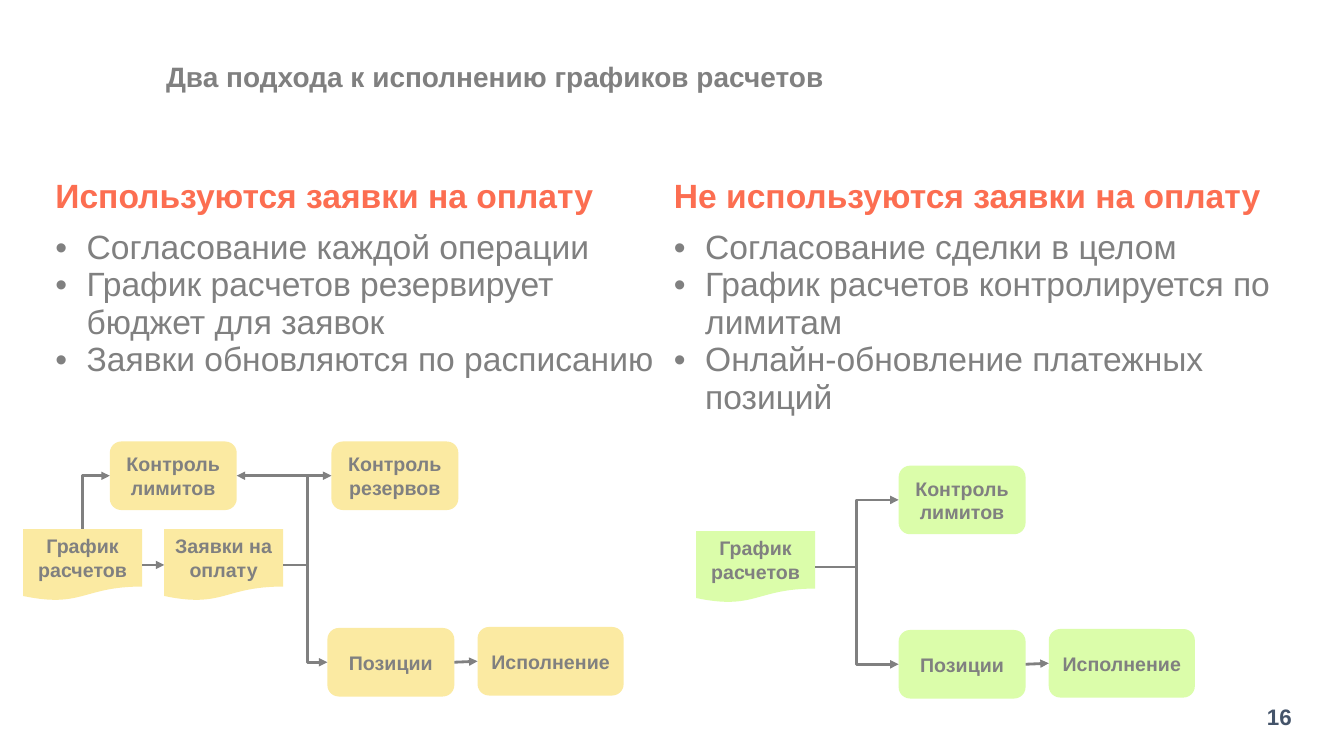
import pptx
import pptx.dml.color
import pptx.enum.shapes
import pptx.enum.text
import pptx.oxml.ns
import pptx.util
from lxml import etree

GRID = pptx.util.Inches(0.1)  # one column or row of the slide grid
FONT = "Arial"
GRAY, CORAL, NAVY = "808080", "FC6E51", "44546A"
YELLOW, GREEN = "FBEAA2", "DBFDAA"
TOP, LEFT, RIGHT = 0, 1, 3  # connection sites
SHAPES = pptx.enum.shapes.MSO_SHAPE
ALIGN = pptx.enum.text.PP_ALIGN
MIDDLE = pptx.enum.text.MSO_ANCHOR.MIDDLE
SIZES = {
    SHAPES.FLOWCHART_DOCUMENT: (11.8, 7.1),
    SHAPES.ROUNDED_RECTANGLE: (12.6, 6.8),
}
APPROACHES = [
    ("Используются заявки на оплату",
     ["Согласование каждой операции",
      "График расчетов резервирует бюджет для заявок",
      "Заявки обновляются по расписанию"]),
    ("Не используются заявки на оплату",
     ["Согласование сделки в целом",
      "График расчетов контролируется по лимитам",
      "Онлайн-обновление платежных позиций"]),
]


def grid(*steps):
    return [round(step * GRID) for step in steps]


def color(value):
    return pptx.dml.color.RGBColor.from_string(value)


def add_xml(parent, tag, **attributes):
    return etree.SubElement(parent, pptx.oxml.ns.qn(tag), attributes)


def style_text(paragraph, size, hex_color, bold=True, align=ALIGN.LEFT):
    paragraph.alignment = align
    for run in paragraph.runs:
        run.font.name = FONT
        run.font.size = pptx.util.Pt(size)
        run.font.bold = bold
        run.font.color.rgb = color(hex_color)


def add_label(slide, text, box, size, hex_color, spacing, align=ALIGN.LEFT):
    frame = slide.shapes.add_textbox(*grid(*box)).text_frame
    frame.word_wrap = True
    frame.vertical_anchor = MIDDLE
    frame.text = text
    frame.paragraphs[0].line_spacing = spacing
    style_text(frame.paragraphs[0], size, hex_color, align=align)


def add_bullet(paragraph):
    properties = paragraph._p.get_or_add_pPr()
    indent = pptx.util.Inches(0.31)
    properties.set("marL", str(indent))
    properties.set("indent", str(-indent))
    add_xml(properties, "a:buFont", typeface=FONT)
    add_xml(properties, "a:buChar", char="•")


def add_comparison(slide):
    frame = slide.shapes.add_table(2, 2, *grid(4.5, 17.2, 122.8, 8.2))
    table = frame.table
    for column, (heading, points) in enumerate(APPROACHES):
        header, body = table.cell(0, column), table.cell(1, column)
        header.text_frame.text = heading
        style_text(header.text_frame.paragraphs[0], 24, CORAL)
        body.text_frame.text = "\n".join(points)
        for paragraph in body.text_frame.paragraphs:
            add_bullet(paragraph)
            style_text(paragraph, 24, GRAY, bold=False)
        for cell in (header, body):
            cell.fill.background()


def add_node(slide, kind, text, left, top, fill, width=None):
    default_width, height = SIZES[kind]
    box = grid(left, top, width or default_width, height)
    shape = slide.shapes.add_shape(kind, *box)
    shape.shadow.inherit = False
    shape.fill.solid()
    shape.fill.fore_color.rgb = color(fill)
    shape.line.fill.background()
    shape.text_frame.word_wrap = True
    shape.text_frame.vertical_anchor = MIDDLE
    shape.text_frame.text = text
    style_text(shape.text_frame.paragraphs[0], 14, GRAY, align=ALIGN.CENTER)
    return shape


def add_document(slide, text, left, top, fill):
    return add_node(slide, SHAPES.FLOWCHART_DOCUMENT, text, left, top, fill)


def add_step(slide, text, left, top, fill, width=None):
    return add_node(slide, SHAPES.ROUNDED_RECTANGLE, text, left, top, fill, width)


def connect(slide, start, end, sites=(RIGHT, LEFT), bend=None, arrow="a:tailEnd"):
    """Glue an arrow between two nodes; bend is the turn's share of the width."""
    kinds = pptx.enum.shapes.MSO_CONNECTOR
    kind = kinds.STRAIGHT if bend is None else kinds.ELBOW
    connector = slide.shapes.add_connector(kind, 0, 0, 0, 0)
    connector.begin_connect(start, sites[0])
    connector.end_connect(end, sites[1])
    connector.line.color.rgb = color(GRAY)
    connector.line.width = pptx.util.Pt(2)
    add_xml(connector.line._get_or_add_ln(), arrow, type="triangle")
    properties = connector._element.spPr
    add_xml(properties, "a:effectLst")
    if bend is not None:
        guides = properties.find(".//" + pptx.oxml.ns.qn("a:avLst"))
        add_xml(guides, "a:gd", name="adj1", fmla=f"val {round(bend * 100000)}")
    return connector


def connect_corner(slide, start, end):
    """Draw a one-turn arrow from the top of start to the left of end."""
    connector = connect(slide, end, start, (LEFT, TOP), arrow="a:headEnd")
    geometry = connector._element.spPr.find(pptx.oxml.ns.qn("a:prstGeom"))
    geometry.set("prst", "bentConnector2")


def add_execution(slide, left, top, fill):
    """Add the positions step with the execution step after it."""
    positions = add_step(slide, "Позиции", left, top, fill)
    execution = add_step(slide, "Исполнение", left + 14.9, top - 0.1, fill, 14.5)
    connect(slide, positions, execution)
    return positions


def add_request_flow(slide):
    schedule = add_document(slide, "График расчетов", 2.3, 52.5, YELLOW)
    requests = add_document(slide, "Заявки на оплату", 16.3, 52.5, YELLOW)
    limits = add_step(slide, "Контроль лимитов", 10.9, 43.8, YELLOW)
    reserves = add_step(slide, "Контроль резервов", 32.9, 43.8, YELLOW)
    positions = add_execution(slide, 32.5, 62.3, YELLOW)
    connect(slide, schedule, requests)
    connect(slide, requests, limits, (RIGHT, RIGHT), bend=-0.54)
    connect(slide, requests, positions, bend=0.56)
    connect(slide, requests, reserves, bend=0.5)
    connect_corner(slide, schedule, limits)


def add_direct_flow(slide):
    schedule = add_document(slide, "График расчетов", 69.1, 52.7, GREEN)
    limits = add_step(slide, "Контроль лимитов", 89.2, 46.2, GREEN)
    positions = add_execution(slide, 89.2, 62.5, GREEN)
    for target in (limits, positions):
        connect(slide, schedule, target, bend=0.5)


def main():
    presentation = pptx.Presentation()
    presentation.slide_width, presentation.slide_height = grid(133.4, 75)
    slide = presentation.slides.add_slide(presentation.slide_layouts[6])
    add_label(slide, "16", (119.2, 69, 10, 3.9), 16, NAVY, 1.1, ALIGN.RIGHT)
    add_label(slide, "Два подхода к исполнению графиков расчетов",
              (15.5, 0.5, 108.7, 14.5), 20, GRAY, 0.9)
    add_comparison(slide)
    add_request_flow(slide)
    add_direct_flow(slide)
    presentation.save("out.pptx")


if __name__ == "__main__":
    main()
